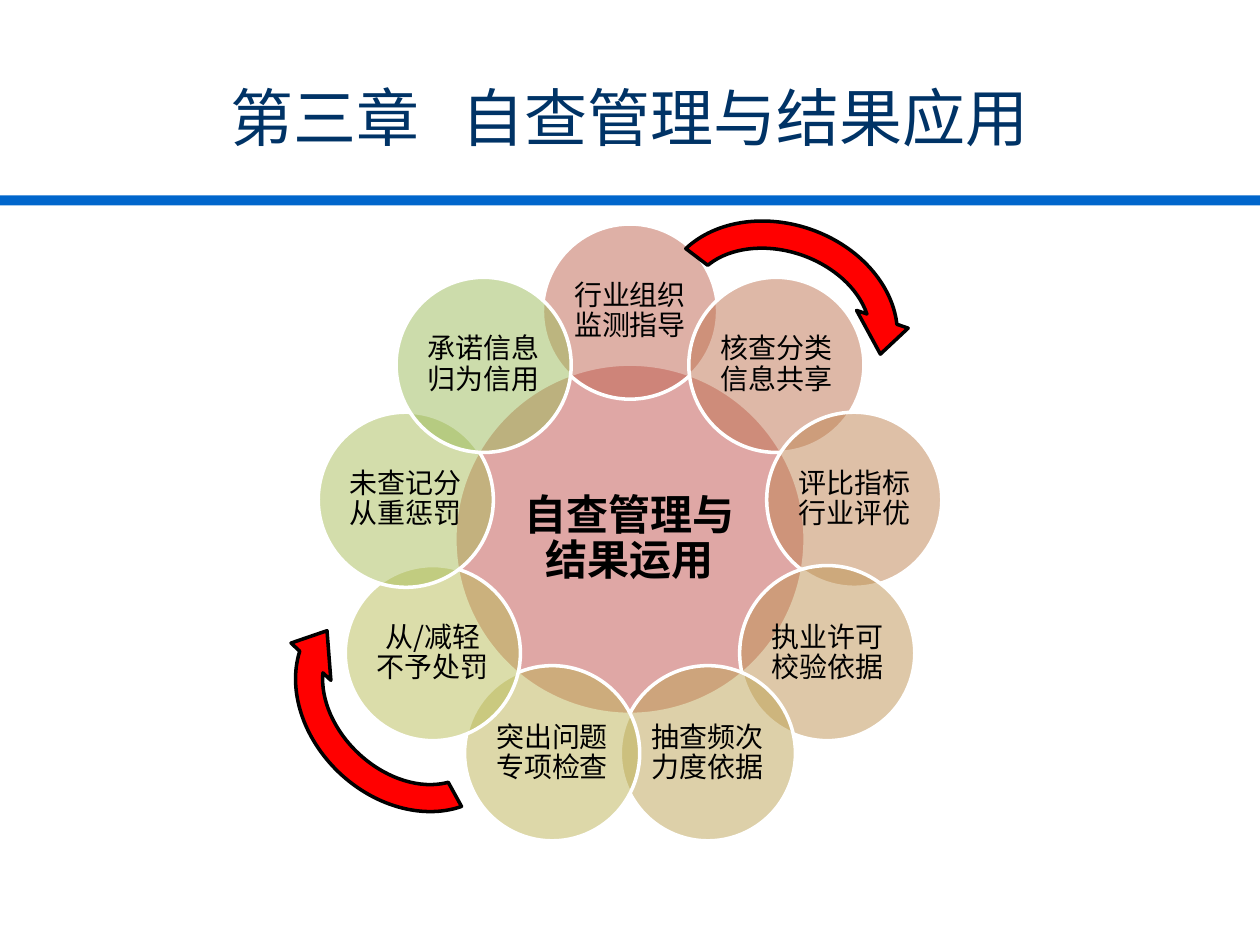
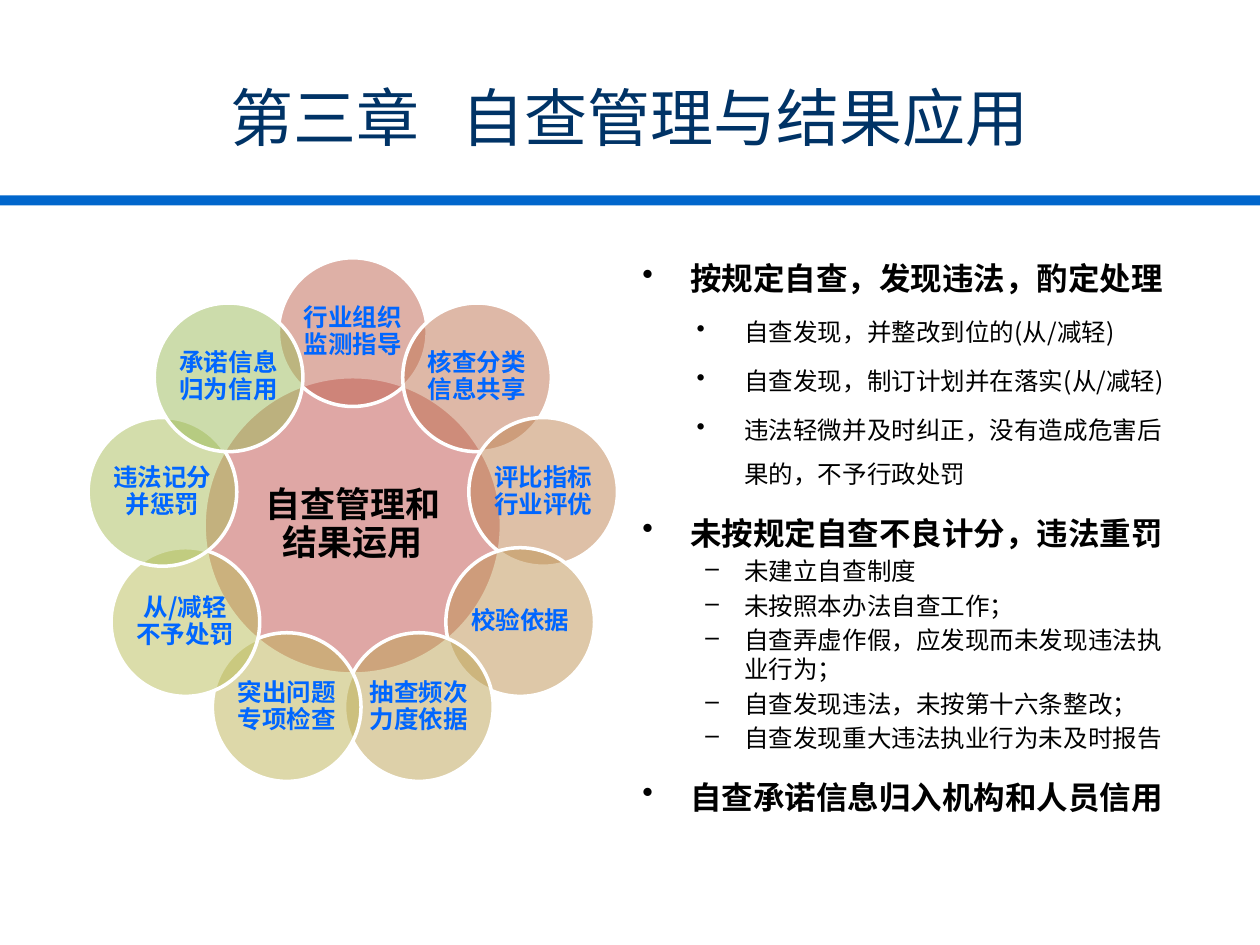
import math

import pptx
import pptx.dml.color
import pptx.enum.shapes
import pptx.enum.text
import pptx.oxml.ns
import pptx.util
from lxml import etree

Inches = pptx.util.Inches
Pt = pptx.util.Pt
RGBColor = pptx.dml.color.RGBColor
SHAPE = pptx.enum.shapes.MSO_SHAPE
ALIGN = pptx.enum.text.PP_ALIGN
ANCHOR = pptx.enum.text.MSO_ANCHOR
qn = pptx.oxml.ns.qn

# Shared look
FONT = "Noto Sans CJK SC"
BLACK = RGBColor(0, 0, 0)
WHITE = RGBColor(255, 255, 255)
NAVY = RGBColor(0x00, 0x33, 0x66)
BLUE = RGBColor(0x00, 0x66, 0xCC)
BRIGHT = RGBColor(0x00, 0x66, 0xFF)
RED = RGBColor(255, 0, 0)
HUB = RGBColor(0xC0, 0x50, 0x4D)
PETALS = [RGBColor.from_string(code) for code in (
    "BF624E", "BF7350", "BE8351", "BE9352", "BDA354",
    "BDB255", "B8BC56", "A9BC58", "9BBB59")]

# Slide wording
TITLE = "第三章 自查管理与结果应用"
TOPICS = ["行业组织监测指导", "核查分类信息共享", "评比指标行业评优",
          "执业许可校验依据", "抽查频次力度依据", "突出问题专项检查",
          "从/减轻不予处罚", "未查记分从重惩罚", "承诺信息归为信用"]
CHANGED = {3: "校验依据", 7: "违法记分并惩罚"}
RULES = [
    ("head", "按规定自查，发现违法，酌定处理"),
    ("case", "自查发现，并整改到位的(从/减轻)"),
    ("case", "自查发现，制订计划并在落实(从/减轻)"),
    ("case", "违法轻微并及时纠正，没有造成危害后果的，不予行政处罚"),
    ("head", "未按规定自查不良计分，违法重罚"),
    ("fault", "未建立自查制度"),
    ("fault", "未按照本办法自查工作；"),
    ("fault", "自查弄虚作假，应发现而未发现违法执业行为；"),
    ("fault", "自查发现违法，未按第十六条整改；"),
    ("fault", "自查发现重大违法执业行为未及时报告"),
    ("head", "自查承诺信息归入机构和人员信用"),
]
STYLES = {
    "head": dict(size=18, bold=True, lines=1.5, bullet="•", left=0.38, hang=0.38),
    "case": dict(size=14, lines=1.5, bullet="•", left=0.81, hang=0.38, level=1),
    "fault": dict(size=14, bullet="–", left=0.81, hang=0.31, level=1),
}


def add_text(para, words, size=14, color=BLACK, bold=False, align=ALIGN.LEFT,
             lines=1.0, before=0, bullet=None, left=0, hang=0, level=0, track=0):
    """Fill a paragraph; track widens the word gaps, in points."""
    para.alignment = align
    para.line_spacing = lines
    para.space_before = Pt(before)
    para.level = level
    if bullet:
        props = para._p.get_or_add_pPr()
        props.set("marL", str(Inches(left)))
        props.set("indent", str(-Inches(hang)))
        etree.SubElement(props, qn("a:buChar")).set("char", bullet)
    parts = words.replace(" ", "| |").split("|") if track else [words]
    for part in parts:
        run = para.add_run()
        run.text = part
        font = run.font
        font.name, font.size, font.bold = FONT, Pt(size), bold
        font.color.rgb = color
        props = run._r.get_or_add_rPr()
        etree.SubElement(props, qn("a:ea")).set("typeface", FONT)
        if part == " ":
            props.set("spc", str(track * 100))


def add_box(slide, left, top, width, height):
    box = slide.shapes.add_textbox(
        Inches(left), Inches(top), Inches(width), Inches(height))
    box.text_frame.word_wrap = True
    return box.text_frame


def add_form(slide, kind, left, top, width, height, fill, line=None):
    form = slide.shapes.add_shape(
        kind, Inches(left), Inches(top), Inches(width), Inches(height))
    form.shadow.inherit = False
    form.fill.solid()
    form.fill.fore_color.rgb = fill
    if line is None:
        form.line.fill.background()
    else:
        form.line.color.rgb = line
        form.line.width = Pt(2)
    return form


def add_disc(slide, x, y, width, fill, words, pad=0.02, **style):
    """Half-clear circle centred on x, y with its label."""
    disc = add_form(slide, SHAPE.OVAL, x - width / 2, y - width / 2,
                    width, width, fill, WHITE)
    tint = disc._element.spPr.find(qn("a:solidFill"))[0]
    etree.SubElement(tint, qn("a:alpha")).set("val", "50000")
    frame = disc.text_frame
    frame.word_wrap = True
    frame.vertical_anchor = ANCHOR.MIDDLE
    frame.margin_left = frame.margin_right = Inches(pad)
    frame.margin_top = frame.margin_bottom = Inches(pad)
    add_text(frame.paragraphs[0], words, align=ALIGN.CENTER, lines=0.9, **style)


def add_wheel(slide, x, y, width, hub, points, topics, **style):
    """Hub twice as wide as the petals, which sit evenly around it."""
    add_disc(slide, x, y, width * 2, HUB, hub, pad=0.03, size=points, bold=True)
    reach = width * 1.3
    for i, (topic, fill) in enumerate(zip(topics, PETALS)):
        turn = math.tau * i / len(topics)
        add_disc(slide, x + reach * math.sin(turn), y - reach * math.cos(turn),
                 width, fill, topic, **style)


def add_arrow(slide, left, top, turn):
    arrow = add_form(slide, SHAPE.CIRCULAR_ARROW, left, top, 2.13, 1.73, RED, BLACK)
    arrow.rotation = turn
    for i, value in enumerate((0.125, 11.42, 204.58, 118.87, 0.125)):
        arrow.adjustments[i] = value


def add_head(slide):
    frame = add_box(slide, 0, 0.57, 10, 0.71)
    add_text(frame.paragraphs[0], TITLE, size=36, color=NAVY,
             align=ALIGN.CENTER, track=16)
    add_form(slide, SHAPE.RECTANGLE, 0, 1.55, 10, 0.08, BLUE)


def add_rules(slide):
    frame = add_box(slide, 5, 1.86, 4.34, 4.72)
    for i, (kind, words) in enumerate(RULES):
        para = frame.add_paragraph() if i else frame.paragraphs[0]
        style = STYLES[kind]
        add_text(para, words, before=style["size"] * 0.2, **style)


def main():
    deck = pptx.Presentation()
    deck.slide_width, deck.slide_height = Inches(10), Inches(7.5)
    blank = deck.slide_layouts[6]

    # Wheel with turning arrows
    slide = deck.slides.add_slide(blank)
    add_wheel(slide, 5, 4.28, 1.39, "自查管理与结果运用", 24, TOPICS, size=16)
    add_head(slide)
    add_arrow(slide, 5.12, 1.67, 19)
    add_arrow(slide, 2.15, 4.72, 223.1)

    # Wheel beside the rules
    slide = deck.slides.add_slide(blank)
    topics = [CHANGED.get(i, topic) for i, topic in enumerate(TOPICS)]
    add_wheel(slide, 2.8, 4.17, 1.18, "自查管理和结果运用", 20, topics,
              size=14, color=BRIGHT, bold=True)
    add_head(slide)
    add_rules(slide)

    deck.save("out.pptx")


if __name__ == "__main__":
    main()
